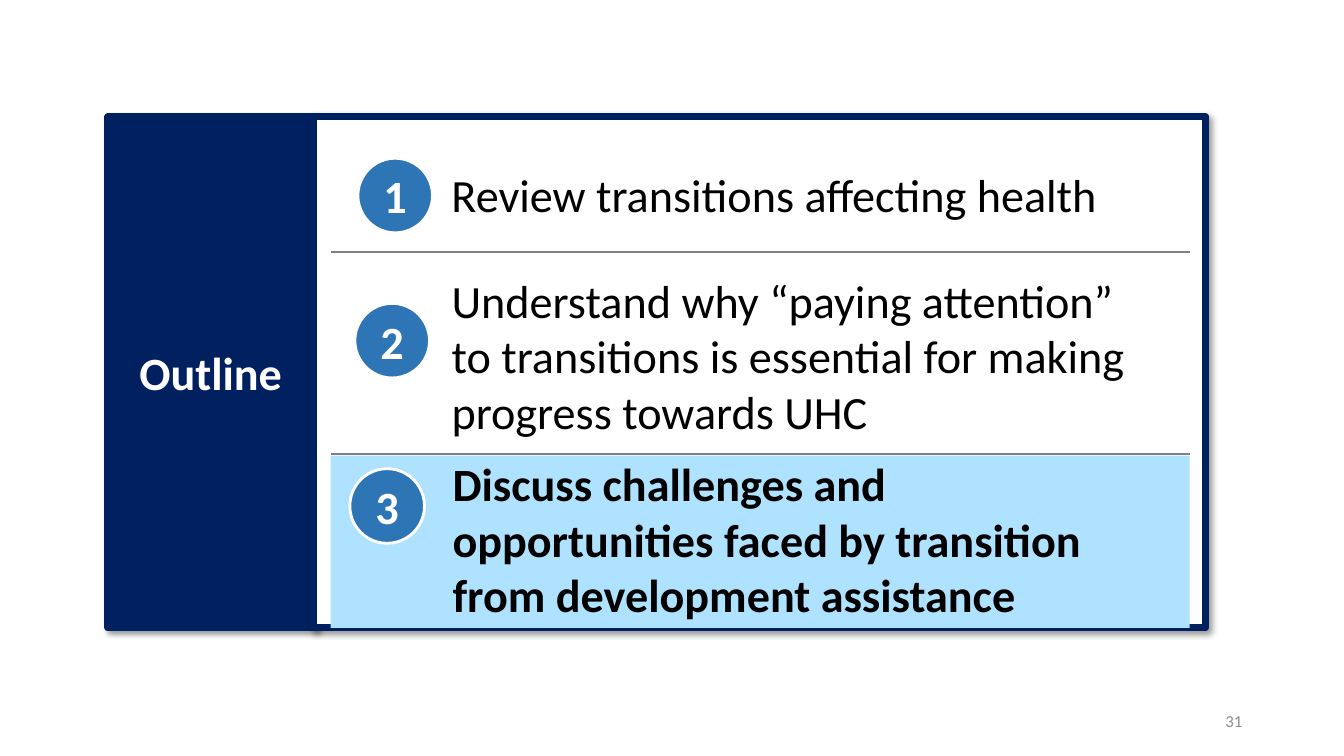
from lxml import etree
from pptx import Presentation
from pptx.dml.color import RGBColor
from pptx.enum.shapes import MSO_CONNECTOR as CONN, MSO_SHAPE as SHAPE
from pptx.enum.text import MSO_ANCHOR as ANCHOR, MSO_AUTO_SIZE as FIT, PP_ALIGN as ALIGN
from pptx.oxml import parse_xml
from pptx.oxml.ns import nsdecls, qn
from pptx.util import Inches, Pt

NAVY = RGBColor(0x00, 0x20, 0x60)
BLUE = RGBColor(0x2E, 0x75, 0xB6)
SKY = RGBColor(0xAF, 0xE2, 0xFF)
GRAY = RGBColor(0x80, 0x80, 0x80)
PALE_GRAY = RGBColor(0x8C, 0x8C, 0x8C)
WHITE = RGBColor(0xFF, 0xFF, 0xFF)
BLACK = RGBColor(0x00, 0x00, 0x00)

SHADOW = (
    f'<a:effectLst {nsdecls("a")}>'
    '<a:outerShdw blurRad="50800" dist="38100" dir="2700000" algn="tl" rotWithShape="0">'
    '<a:srgbClr val="000000"><a:alpha val="40000"/></a:srgbClr>'
    '</a:outerShdw></a:effectLst>'
)


class OutlineSlide:
    """Style and drawing methods for the current slide."""

    font = "Calibri"
    size = 33

    def __init__(self, prs):
        self.s = prs.slides.add_slide(prs.slide_layouts[5])

    def set_text(self, shape, text, color, size=size, bold=False,
                 align=ALIGN.LEFT, anchor=ANCHOR.TOP):
        tf = shape.text_frame
        tf.word_wrap = True
        tf.auto_size = FIT.NONE
        tf.vertical_anchor = anchor
        p = tf.paragraphs[0]
        p.alignment = align
        r = p.add_run()
        r.text = text
        r.font.name = self.font
        r.font.size = Pt(size)
        r.font.bold = bold
        r.font.color.rgb = color
        return tf

    def paint(self, shape, fill, line=None, width=0, shadow=False):
        shape.fill.solid()
        shape.fill.fore_color.rgb = fill
        if line is None:
            shape.line.fill.background()
        else:
            shape.line.color.rgb = line
            shape.line.width = Pt(width)
        if shadow:
            shape._element.spPr.append(parse_xml(SHADOW))

    def title(self, text, x, y, w, h):
        sp = self.s.shapes.title
        sp.left, sp.top, sp.width, sp.height = map(Inches, (x, y, w, h))
        self.paint(sp, NAVY, NAVY, 5, shadow=True)
        self.set_text(sp, text, WHITE, bold=True, align=ALIGN.CENTER, anchor=ANCHOR.MIDDLE)

    def box(self, kind, x, y, w, h, fill, line=None, width=0, shadow=False):
        sp = self.s.shapes.add_shape(kind, *map(Inches, (x, y, w, h)))
        if not shadow:
            sp.shadow.inherit = False
        self.paint(sp, fill, line, width, shadow)
        return sp

    def badge(self, number, x, y, d=0.74):
        sp = self.box(SHAPE.OVAL, x, y, d, d, BLUE, WHITE, 2)
        tf = self.set_text(sp, str(number), WHITE, bold=True,
                           align=ALIGN.CENTER, anchor=ANCHOR.MIDDLE)
        tf.margin_left = tf.margin_right = 0

    def text(self, text, x, y, w, h, color=BLACK, **style):
        sp = self.s.shapes.add_textbox(*map(Inches, (x, y, w, h)))
        self.set_text(sp, text, color, **style)

    def rule(self, x1, x2, y):
        cx = self.s.shapes.add_connector(CONN.STRAIGHT, *map(Inches, (x1, y, x2, y)))
        cx.line.color.rgb = GRAY
        cx.line.width = Pt(1.5)
        etree.SubElement(cx._element.spPr, qn("a:effectLst"))


def main():
    prs = Presentation()
    prs.slide_width, prs.slide_height = Inches(13.33), Inches(7.5)
    slide = OutlineSlide(prs)

    # Title panel and content frame
    top, height = 1.16, 5.07
    slide.title("Outline", 1.07, top, 2.04, height)
    slide.box(SHAPE.RECTANGLE, 3.11, top, 8.85, height, WHITE, NAVY, 5, shadow=True)

    # Row dividers and highlight of the current item
    left, right = 3.28, 11.8
    for y in (2.5, 4.5):
        slide.rule(left, right, y)
    slide.box(SHAPE.RECTANGLE, left, 4.52, right - left, 1.71, SKY)

    # Numbered items: text, badge position, text box, bold
    items = [
        ("Review transitions affecting health",
         (3.55, 1.57), (4.38, 1.6, 7.84, 0.66), False),
        ("Understand why “paying attention” to transitions is essential "
         "for making progress towards UHC",
         (3.52, 3.01), (4.38, 2.65, 7.09, 1.77), False),
        ("Discuss challenges and opportunities faced by transition "
         "from development assistance",
         (3.47, 4.65), (4.39, 4.47, 7.09, 1.77), True),
    ]
    for number, (text, badge_at, text_at, bold) in enumerate(items, 1):
        slide.badge(number, *badge_at)
        slide.text(text, *text_at, bold=bold)

    # Page number
    slide.text("31", 9.42, 6.95, 3, 0.4, PALE_GRAY, size=12,
               align=ALIGN.RIGHT, anchor=ANCHOR.MIDDLE)

    prs.save("out.pptx")


if __name__ == "__main__":
    main()
